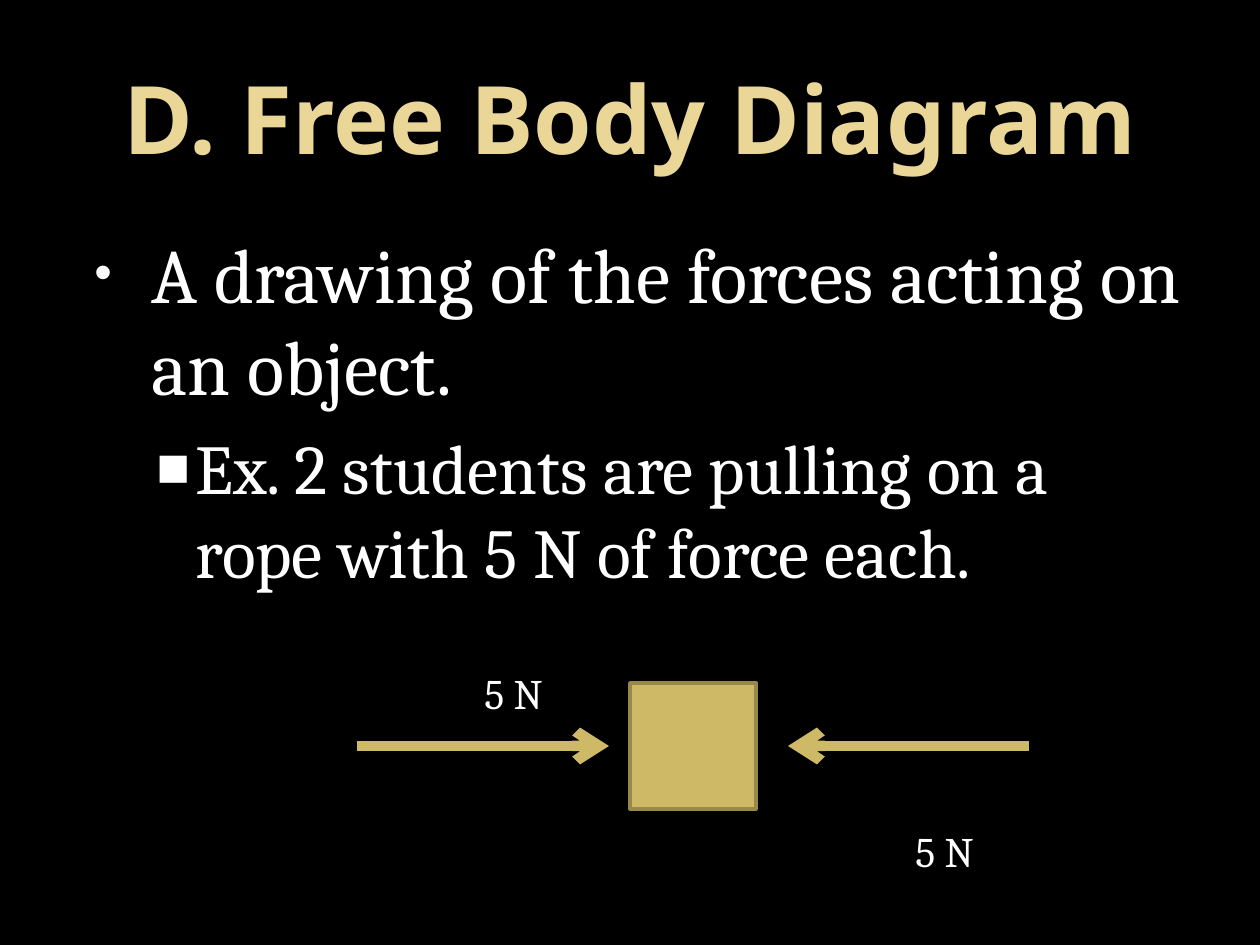
from lxml import etree
from pptx import Presentation
from pptx.dml.color import RGBColor
from pptx.enum.shapes import MSO_CONNECTOR, MSO_SHAPE
from pptx.enum.text import MSO_ANCHOR, PP_ALIGN
from pptx.oxml.ns import qn
from pptx.util import Emu, Pt

STRAIGHT, RECTANGLE = MSO_CONNECTOR.STRAIGHT, MSO_SHAPE.RECTANGLE
TOP, MIDDLE = MSO_ANCHOR.TOP, MSO_ANCHOR.MIDDLE
LEFT, CENTER = PP_ALIGN.LEFT, PP_ALIGN.CENTER

COLORS = {
    "background": "000000", "title": "EAD696", "text": "FFFFFF",
    "bullet": "F9F9F9", "gold": "CEB966", "outline": "98894B",
}
TITLE = "D. Free Body Diagram"
TITLE_BOX = (63, 38, 1134, 157)
BODY_BOX = (63, 220, 1134, 649)
# text, size, left margin, first-line indent, bullet, bullet percent, bullet colour
BODY = [
    ("A drawing of the forces acting on an object.", 44, 76, -57, "•", 65, "bullet"),
    ("Ex. 2 students are pulling on a rope with 5 N of force each.",
     40, 120, -39, "■", 80, "text"),
]
OBJECT_BOX = (630, 683, 126, 126)
# arrow start x, arrow end x, label, label box
FORCES = [
    (357, 609, "5 N", (472, 661, 92, 63)),
    (1029, 788, "5 N", (903, 819, 92, 63)),
]


def px(value):
    return Emu(round(value * 914400 / 126))


def color(name):
    return RGBColor.from_string(COLORS[name])


def add_text_frame(slide, box, anchor=TOP, wrap=True):
    frame = slide.shapes.add_textbox(*map(px, box)).text_frame
    frame.word_wrap = wrap
    frame.vertical_anchor = anchor
    return frame


def write(paragraph, text, size, font="Cambria", fill="text", bold=False, align=LEFT):
    paragraph.alignment = align
    run = paragraph.add_run()
    run.text = text
    for name, value in {"name": font, "size": Pt(size), "bold": bold}.items():
        setattr(run.font, name, value)
    run.font.color.rgb = color(fill)


def add_bullet(paragraph, margin, indent, character, percent, fill):
    properties = paragraph._p.get_or_add_pPr()
    properties.set("marL", str(px(margin)))
    properties.set("indent", str(px(indent)))
    bullet_color = etree.SubElement(properties, qn("a:buClr"))
    etree.SubElement(bullet_color, qn("a:srgbClr"), val=COLORS[fill])
    etree.SubElement(properties, qn("a:buSzPct"), val=str(percent * 1000))
    etree.SubElement(properties, qn("a:buFont"), typeface="Arial")
    etree.SubElement(properties, qn("a:buChar"), char=character)


def add_arrow(slide, start, end, y):
    arrow = slide.shapes.add_connector(STRAIGHT, px(start), px(y), px(end), px(y))
    arrow.line.color.rgb = color("gold")
    arrow.line.width = Pt(6)
    etree.SubElement(arrow.line._get_or_add_ln(), qn("a:tailEnd"), type="arrow")
    etree.SubElement(arrow._element.spPr, qn("a:effectLst"))


def main():
    presentation = Presentation()
    presentation.slide_width, presentation.slide_height = px(1260), px(945)
    slide = presentation.slides.add_slide(presentation.slide_layouts[6])
    slide.background.fill.solid()
    slide.background.fill.fore_color.rgb = color("background")

    title = add_text_frame(slide, TITLE_BOX, MIDDLE)
    write(title.paragraphs[0], TITLE, 54, "Noto Sans", "title", True, CENTER)

    body = add_text_frame(slide, BODY_BOX)
    for index, (text, size, *bullet) in enumerate(BODY):
        paragraph = body.add_paragraph() if index else body.paragraphs[0]
        write(paragraph, text, size)
        paragraph.space_before = Pt(round(size * 0.2))
        add_bullet(paragraph, *bullet)

    square = slide.shapes.add_shape(RECTANGLE, *map(px, OBJECT_BOX))
    square.shadow.inherit = False
    square.fill.solid()
    square.fill.fore_color.rgb = color("gold")
    square.line.color.rgb = color("outline")
    square.line.width = Pt(2)

    middle = OBJECT_BOX[1] + OBJECT_BOX[3] / 2
    for start, end, label, box in FORCES:
        add_arrow(slide, start, end, middle)
        frame = add_text_frame(slide, box, wrap=False)
        write(frame.paragraphs[0], label, 24)

    presentation.save("out.pptx")


if __name__ == "__main__":
    main()
